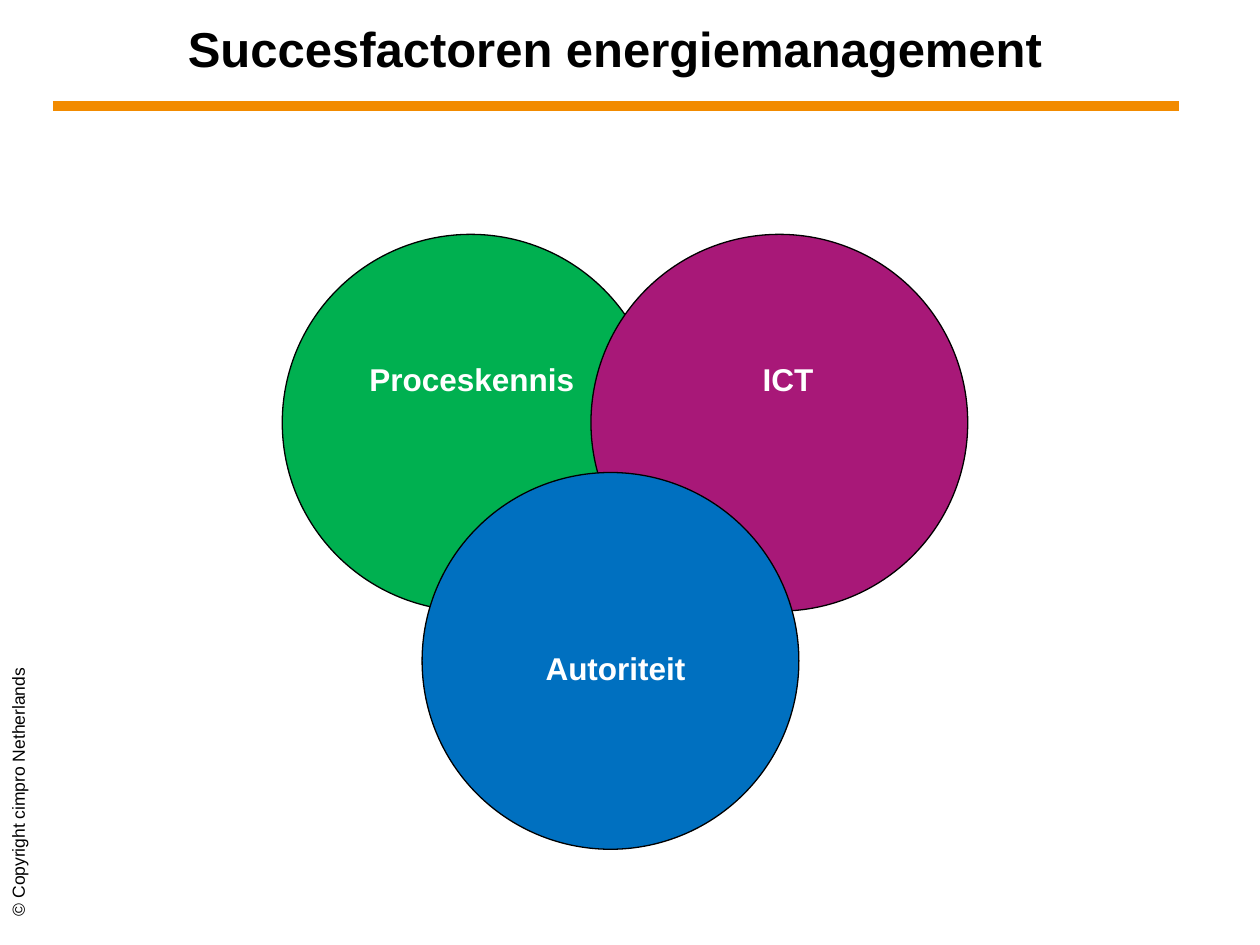
"""Build the slide on success factors in energy management."""
from dataclasses import dataclass

from lxml import etree
from pptx import Presentation
from pptx.dml.color import RGBColor
from pptx.enum import shapes, text
from pptx.oxml import ns
from pptx.util import Inches, Pt


@dataclass(frozen=True)
class Theme:
    font: str = "Arial"
    ink: str = "000000"
    label: str = "FFFFFF"
    rule: str = "F28B00"
    title_pt: float = 28
    label_pt: float = 18
    credit_pt: float = 10
    rule_pt: float = 6
    outline_pt: float = 0.75


@dataclass(frozen=True)
class Box:
    left: float
    top: float
    width: float
    height: float

    def emu(self) -> tuple:
        return tuple(Inches(v) for v in (self.left, self.top, self.width, self.height))


@dataclass(frozen=True)
class Factor:
    name: str
    fill: str
    left: float
    top: float
    label_left: float
    label_top: float


THEME = Theme()
DIAMETER = 2.99
LABEL_WIDTH, LABEL_HEIGHT = 1.89, 0.4
FACTORS = (
    Factor("Proceskennis", "00B050", 2.24, 1.86, 2.8, 2.81),
    Factor("ICT", "A81878", 4.69, 1.86, 5.31, 2.81),
    Factor("Autoriteit", "0070C0", 3.35, 3.75, 3.94, 5.1),
)


def add_text(s, box: Box, words: str, size: float, color: str, bold: bool = True,
             align=text.PP_ALIGN.CENTER, anchor=text.MSO_ANCHOR.TOP):
    sp = s.shapes.add_textbox(*box.emu())
    tf = sp.text_frame
    tf.word_wrap = True
    tf.vertical_anchor = anchor
    tf.text = words
    p = tf.paragraphs[0]
    p.alignment = align
    f = p.runs[0].font
    f.name, f.size, f.bold = THEME.font, Pt(size), bold
    f.color.rgb = RGBColor.from_string(color)
    return sp


def add_rule(s, left: float, right: float, y: float) -> None:
    cx = s.shapes.add_connector(shapes.MSO_CONNECTOR.STRAIGHT,
                                Inches(left), Inches(y), Inches(right), Inches(y))
    cx.line.color.rgb = RGBColor.from_string(THEME.rule)
    cx.line.width = Pt(THEME.rule_pt)
    etree.SubElement(cx._element.spPr, ns.qn("a:effectLst"))


def add_circle(s, factor: Factor) -> None:
    box = Box(factor.left, factor.top, DIAMETER, DIAMETER)
    sp = s.shapes.add_shape(shapes.MSO_SHAPE.OVAL, *box.emu())
    sp.shadow.inherit = False
    sp.fill.solid()
    sp.fill.fore_color.rgb = RGBColor.from_string(factor.fill)
    sp.line.color.rgb = RGBColor.from_string(THEME.ink)
    sp.line.width = Pt(THEME.outline_pt)


def add_label(s, factor: Factor) -> None:
    box = Box(factor.label_left, factor.label_top, LABEL_WIDTH, LABEL_HEIGHT)
    add_text(s, box, factor.name, THEME.label_pt, THEME.label)


def main() -> None:
    prs = Presentation()
    prs.slide_width, prs.slide_height = Inches(10), Inches(7.5)
    s = prs.slides.add_slide(prs.slide_layouts[6])
    add_rule(s, 0.42, 9.36, 0.84)
    credit = add_text(s, Box(-1.16, 5.92, 2.62, 0.28), "© Copyright cimpro Netherlands",
                      THEME.credit_pt, THEME.ink, bold=False, align=text.PP_ALIGN.LEFT)
    credit.rotation = 270
    add_text(s, Box(0.43, 0.08, 8.9, 0.58), "Succesfactoren energiemanagement",
             THEME.title_pt, THEME.ink, anchor=text.MSO_ANCHOR.BOTTOM)
    for draw in (add_circle, add_label):
        for factor in FACTORS:
            draw(s, factor)
    prs.save("out.pptx")


if __name__ == "__main__":
    main()
